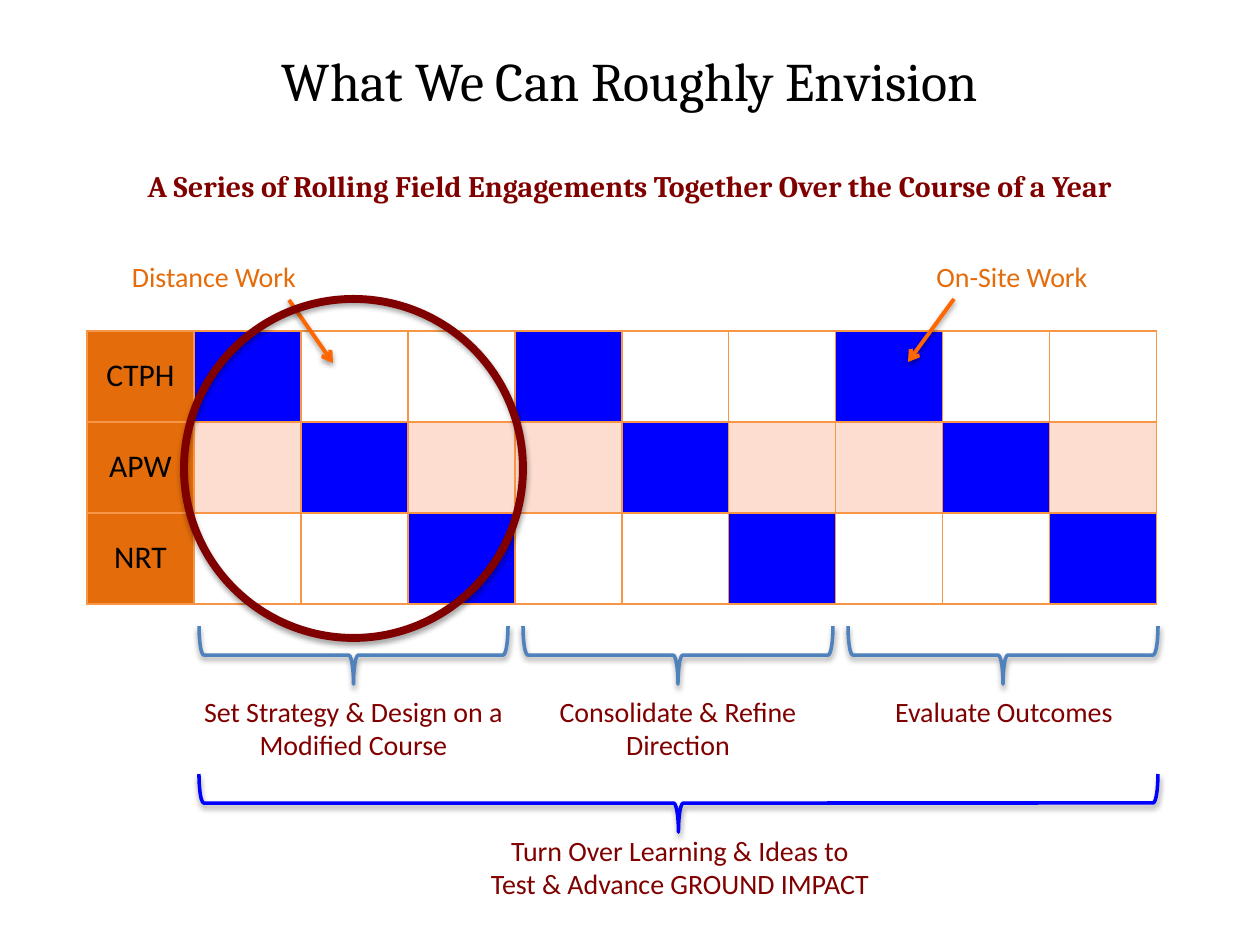
import pptx
import pptx.util
import pptx.dml.color
import pptx.enum.shapes
import pptx.enum.text
import pptx.oxml
import pptx.oxml.ns

THEME = {
    "black": "000000", "maroon": "800000", "orange": "E46C0A", "arrow": "FF6600",
    "border": "F79646", "onsite": "0000FF", "band": "FCDDCF", "brace": "4F81BD",
    "heading": "Cambria", "body": "Calibri",
    "title_size": 31, "subtitle_size": 17, "row_size": 18, "label_size": 16,
}
SCALE = 914400 / 126

TITLE = "What We Can Roughly Envision"
SUBTITLE = "A Series of Rolling Field Engagements Together Over the Course of a Year"
SITES = ["CTPH", "APW", "NRT"]
PHASES = 3
TABLE_LEFT, TABLE_TOP, COLUMN_WIDTH, ROW_HEIGHT = 87, 331, 107, 91

BRACE_HEIGHT = 58
BRACES = [
    (199, 774, 959, "onsite"),
    (523, 626, 310, "brace"),
    (848, 626, 310, "brace"),
    (199, 626, 309, "brace"),
]
LABELS = [
    (184, 688, 339, 81, ["Set Strategy & Design on a", "Modified Course"], "maroon"),
    (494, 688, 368, 81, ["Consolidate & Refine Direction"], "maroon"),
    (820, 688, 368, 47, ["Evaluate Outcomes"], "maroon"),
    (471, 827, 418, 81, ["Turn Over Learning & Ideas to", "Test & Advance GROUND IMPACT"], "maroon"),
    (843, 253, 338, 47, ["On-Site Work"], "orange"),
    (45, 253, 338, 47, ["Distance Work"], "orange"),
]
ARROWS = [(954, 299, 908, 362), (289, 300, 333, 363)]
CYCLE_CIRCLE = (184, 299, 339, 339)


def px(value):
    return round(value * SCALE)


def color(name):
    return pptx.dml.color.RGBColor.from_string(THEME[name])


def xml(text):
    namespaces = pptx.oxml.ns.nsdecls("a")
    return pptx.oxml.parse_xml(text.replace(" NS", " " + namespaces, 1))


def write(paragraph, text, size, font, tint, bold=False):
    paragraph.alignment = pptx.enum.text.PP_ALIGN.CENTER
    run = paragraph.add_run()
    run.text = text
    run.font.size = pptx.util.Pt(THEME[size])
    run.font.name = THEME[font]
    run.font.color.rgb = color(tint)
    run.font.bold = bold


def add_text(slide, box, lines, size, font, tint, bold=False, middle=False):
    frame = slide.shapes.add_textbox(*map(px, box)).text_frame
    frame.word_wrap = True
    if middle:
        frame.vertical_anchor = pptx.enum.text.MSO_ANCHOR.MIDDLE
    for index, line in enumerate(lines):
        paragraph = frame.add_paragraph() if index else frame.paragraphs[0]
        write(paragraph, line, size, font, tint, bold)


def add_shadow(shape, opacity=38):
    shape._element.spPr.append(xml(
        '<a:effectLst NS><a:outerShdw blurRad="40000" dist="20000" dir="5400000" '
        f'rotWithShape="0"><a:srgbClr val="000000"><a:alpha val="{opacity}000"/>'
        "</a:srgbClr></a:outerShdw></a:effectLst>"))


def add_outline(slide, kind, box, tint, width, opacity=38):
    shape = slide.shapes.add_shape(kind, *map(px, box))
    shape.fill.background()
    shape.line.color.rgb = color(tint)
    shape.line.width = pptx.util.Pt(width)
    add_shadow(shape, opacity)
    return shape


def add_brace(slide, left, top, width, tint):
    offset = (width - BRACE_HEIGHT) / 2
    box = (left + offset, top - offset, BRACE_HEIGHT, width)
    kind = pptx.enum.shapes.MSO_SHAPE.LEFT_BRACE
    add_outline(slide, kind, box, tint, 2).rotation = 270


def add_arrow(slide, ends):
    straight = pptx.enum.shapes.MSO_CONNECTOR.STRAIGHT
    connector = slide.shapes.add_connector(straight, *map(px, ends))
    connector.line.color.rgb = color("arrow")
    connector.line.width = pptx.util.Pt(2.25)
    connector.line._get_or_add_ln().append(xml('<a:tailEnd NS type="arrow"/>'))
    add_shadow(connector)


def style_cell(cell, fill):
    properties = cell._tc.get_or_add_tcPr()
    for side in "LRTB":
        properties.append(xml(
            f'<a:ln{side} NS w="12700"><a:solidFill><a:srgbClr val="{THEME["border"]}"/>'
            f"</a:solidFill></a:ln{side}>"))
    if fill:
        cell.fill.solid()
        cell.fill.fore_color.rgb = color(fill)
    else:
        cell.fill.background()


def add_schedule(slide):
    rows, columns = len(SITES), 1 + PHASES * len(SITES)
    box = (TABLE_LEFT, TABLE_TOP, columns * COLUMN_WIDTH, rows * ROW_HEIGHT)
    table = slide.shapes.add_table(rows, columns, *map(px, box)).table
    table.first_row = False
    table.horz_banding = False
    for column in table.columns:
        column.width = px(COLUMN_WIDTH)
    for row, site in enumerate(SITES):
        table.rows[row].height = px(ROW_HEIGHT)
        for column in range(columns):
            if column == 0:
                fill = "orange"
            elif (column - 1) % rows == row:
                fill = "onsite"
            else:
                fill = "band" if row % 2 else None
            style_cell(table.cell(row, column), fill)
        paragraph = table.cell(row, 0).text_frame.paragraphs[0]
        paragraph.line_spacing = 1.5
        write(paragraph, site, "row_size", "body", "black")


def main():
    presentation = pptx.Presentation()
    presentation.slide_width = px(1260)
    presentation.slide_height = px(945)
    slide = presentation.slides.add_slide(presentation.slide_layouts[6])

    add_text(slide, (63, 1, 1134, 158), [TITLE], "title_size", "heading", "black", middle=True)
    add_schedule(slide)
    add_text(slide, (63, 132, 1134, 108), [SUBTITLE], "subtitle_size", "heading", "maroon",
             bold=True, middle=True)
    for brace in BRACES:
        add_brace(slide, *brace)
    for left, top, width, height, lines, tint in LABELS:
        add_text(slide, (left, top, width, height), lines, "label_size", "body", tint)
    for ends in ARROWS:
        add_arrow(slide, ends)
    circle = pptx.enum.shapes.MSO_SHAPE.FLOWCHART_CONNECTOR
    add_outline(slide, circle, CYCLE_CIRCLE, "maroon", 4.5, opacity=35)

    presentation.save("out.pptx")


if __name__ == "__main__":
    main()
